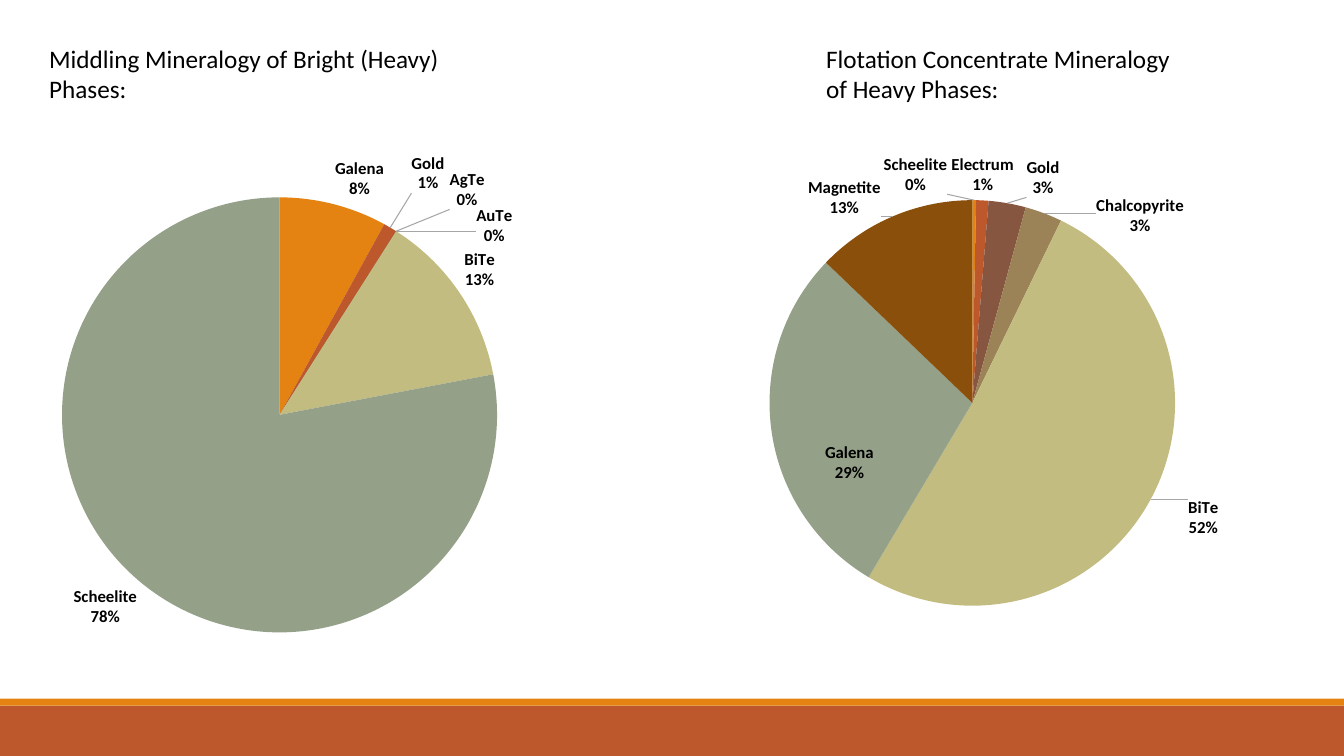
from copy import deepcopy
from dataclasses import dataclass

from pptx import Presentation
from pptx.chart.data import CategoryChartData as ChartData
from pptx.dml.color import RGBColor
from pptx.enum.chart import XL_CHART_TYPE as ChartType, XL_LABEL_POSITION as LabelPosition
from pptx.enum.shapes import MSO_SHAPE as Shape
from pptx.oxml import parse_xml
from pptx.oxml.ns import nsdecls, qn
from pptx.util import Pt


@dataclass(frozen=True)
class Theme:
    font: str = "Calibri"
    text: str = "000000"
    orange: str = "E48312"
    rust: str = "BD582C"
    leader: str = "A6A6A6"
    slices: tuple = ("E48312", "BD582C", "865640", "9B8357", "C2BC80", "94A088", "894F0B")
    heading_size: int = 18
    label_size: int = 12
    chart_size: int = 10


theme = Theme()


def style_font(font, size, bold=False):
    font.name, font.size, font.bold = theme.font, Pt(size), bold
    font.color.rgb = RGBColor.from_string(theme.text)


def layout_xml(tag_values):
    """Manual layout element from (tag, value) pairs."""
    items = "".join(f'<c:{tag} val="{value}"/>' for tag, value in tag_values)
    return parse_xml(f'<c:layout {nsdecls("c")}><c:manualLayout>{items}</c:manualLayout></c:layout>')


presentation = Presentation()
presentation.slide_width, presentation.slide_height = Pt(960), Pt(540)
slide = presentation.slides.add_slide(presentation.slide_layouts[6])

# Footer bands: top, height, colour
for top, height, colour in ((504, 36, theme.rust), (499, 5, theme.orange)):
    band = slide.shapes.add_shape(Shape.RECTANGLE, 0, Pt(top), Pt(960), Pt(height))
    band.shadow.inherit = False
    band.fill.solid()
    band.fill.fore_color.rgb = RGBColor.from_string(colour)
    band.line.fill.background()

headings = (
    ("Middling Mineralogy of Bright (Heavy) Phases:", 28, 300),
    ("Flotation Concentrate Mineralogy of Heavy Phases:", 583, 262),
)
for text, left, width in headings:
    box = slide.shapes.add_textbox(Pt(left), Pt(27.4), Pt(width), Pt(51))
    box.text_frame.word_wrap = True
    paragraph = box.text_frame.paragraphs[0]
    paragraph.text = text
    style_font(paragraph.font, theme.heading_size)

# Frame and plot area are (left, top, width, height) in points;
# each moved label has its (x, y) shift in points and its base position.
# Traces read 0% but need a value above zero to keep their label.
pies = (
    {
        "frame": (-53.3, 100.8, 499, 374.4),
        "plot": (44.3, 141, 310.8, 310.8),
        "minerals": {"Galena": 8, "Gold": 1, "AgTe": 0.01, "AuTe": 0.01,
                     "BiTe": 13, "Scheelite": 78},
        "shifts": {
            "Gold": (13, -21, "outEnd"),
            "AgTe": (36, -12, "outEnd"),
            "AuTe": (55, 14, "outEnd"),
        },
    },
    {
        "frame": (480.2, 77.8, 429.1, 419.8),
        "plot": (549.7, 143, 289.7, 289.7),
        "minerals": {"Scheelite": 0.3, "Electrum": 1, "Gold": 3, "Chalcopyrite": 3,
                     "BiTe": 52, "Galena": 29, "Magnetite": 13},
        "shifts": {
            "Scheelite": (-42, 0, "outEnd"),
            "Gold": (13, 0, "outEnd"),
            "Chalcopyrite": (36, 20, "outEnd"),
            "BiTe": (23, -3, "outEnd"),
            "Galena": (-16, 33, "ctr"),
            "Magnetite": (-7, 5, "outEnd"),
        },
    },
)

for pie in pies:
    left, top, width, height = pie["frame"]
    plot_left, plot_top, plot_width, plot_height = pie["plot"]
    minerals = pie["minerals"]

    data = ChartData()
    data.categories = list(minerals)
    data.add_series("Series 1", list(minerals.values()))
    chart = slide.shapes.add_chart(
        ChartType.PIE, Pt(left), Pt(top), Pt(width), Pt(height), data).chart
    chart.has_title = chart.has_legend = False
    style_font(chart.font, theme.chart_size)
    plot = chart.plots[0]
    plot.vary_by_categories = True

    plot_area = chart.element.find(".//" + qn("c:plotArea"))
    for old_layout in plot_area.findall(qn("c:layout")):
        plot_area.remove(old_layout)
    plot_area.insert(0, layout_xml((
        ("layoutTarget", "inner"), ("xMode", "edge"), ("yMode", "edge"),
        ("x", round((plot_left - left) / width, 4)),
        ("y", round((plot_top - top) / height, 4)),
        ("w", round(plot_width / width, 4)),
        ("h", round(plot_height / height, 4)))))

    series = plot.series[0]
    for index, colour in enumerate(theme.slices[:len(minerals)]):
        fill = series.points[index].format.fill
        fill.solid()
        fill.fore_color.rgb = RGBColor.from_string(colour)

    # Values are whole percentages, so they are shown as they stand
    labels = series.data_labels
    labels.show_category_name = labels.show_value = True
    labels.show_percentage = False
    labels.number_format, labels.number_format_is_linked = '0"%"', False
    labels.position = LabelPosition.OUTSIDE_END
    style_font(labels.font, theme.label_size, bold=True)

    labels_xml = series._element.find(qn("c:dLbls"))
    separator = parse_xml(f'<c:separator {nsdecls("c")}>\n</c:separator>')
    leader_switch = labels_xml.find(qn("c:showLeaderLines"))
    if leader_switch is None:
        leader_switch = parse_xml(f'<c:showLeaderLines {nsdecls("c")} val="1"/>')
        labels_xml.append(leader_switch)
    leader_switch.set("val", "1")
    leader_switch.addprevious(separator)
    leader_switch.addnext(parse_xml(
        f'<c:leaderLines {nsdecls("c", "a")}><c:spPr><a:ln w="9525"><a:solidFill>'
        f'<a:srgbClr val="{theme.leader}"/></a:solidFill></a:ln></c:spPr></c:leaderLines>'))

    # Moved labels share the series settings and add a shift
    shared = [child for child in labels_xml
              if child.tag not in (qn("c:showLeaderLines"), qn("c:leaderLines"))]
    names = [name for name in minerals if name in pie["shifts"]]
    for order, name in enumerate(names):
        shift_x, shift_y, position = pie["shifts"][name]
        label = parse_xml(
            f'<c:dLbl {nsdecls("c")}><c:idx val="{list(minerals).index(name)}"/></c:dLbl>')
        label.append(layout_xml((("x", round(shift_x / width, 4)),
                                 ("y", round(shift_y / height, 4)))))
        for child in shared:
            label.append(deepcopy(child))
        label.find(qn("c:dLblPos")).set("val", position)
        labels_xml.insert(order, label)

presentation.save("out.pptx")
